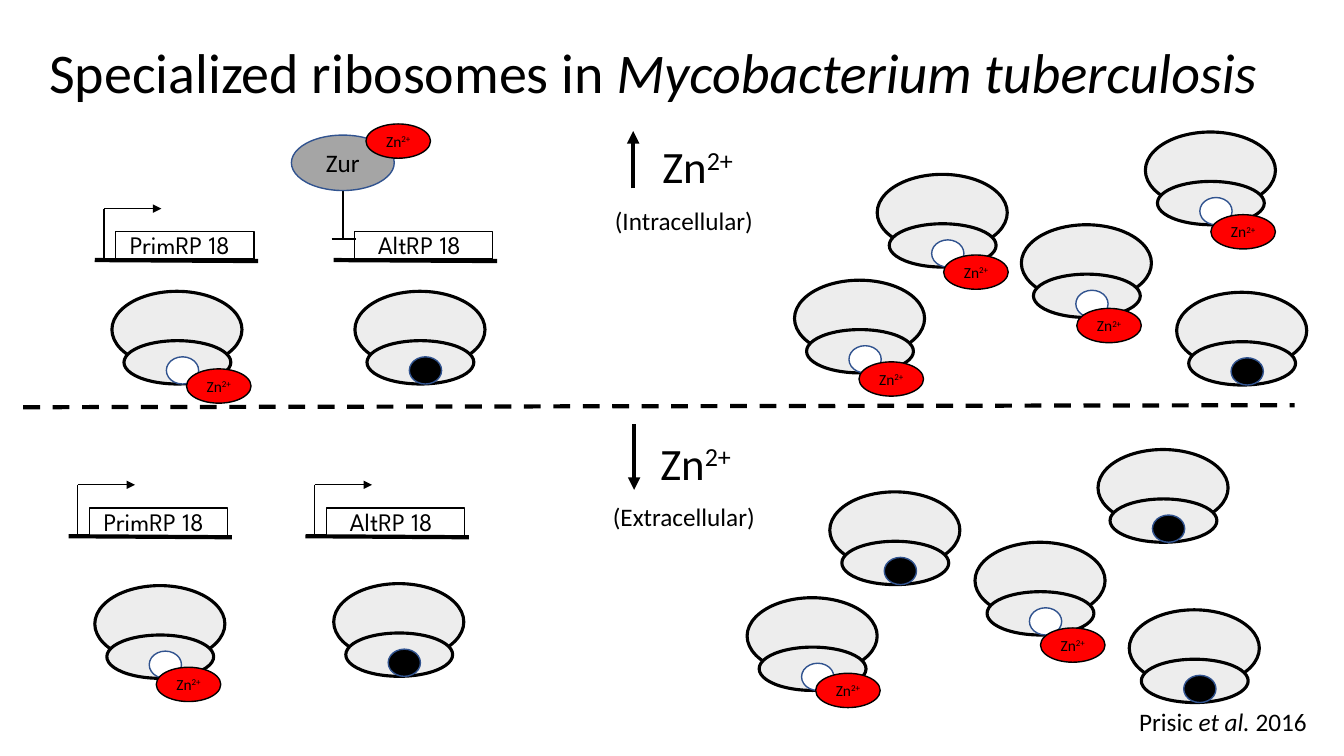
"""Slide on specialized ribosomes of Mycobacterium tuberculosis at high and low zinc."""
from lxml.etree import SubElement
from pptx import Presentation
from pptx.dml.color import RGBColor
from pptx.enum.dml import MSO_LINE
from pptx.enum.shapes import MSO_CONNECTOR, MSO_SHAPE
from pptx.enum.text import MSO_ANCHOR as Anchor, PP_ALIGN as Align
from pptx.oxml.ns import qn
from pptx.util import Inches, Pt

color = RGBColor.from_string
BLACK, WHITE, RED, PALE, GRAY, BLUE = "000000", "FFFFFF", "FF0000", "EDEDED", "A5A5A5", "31538F"
ZINC = [("Zn", ""), ("2+", "super")]


def write(shape, runs, size, font="Calibri"):
    """Fill a shape with one paragraph of (text, style) runs."""
    para = shape.text_frame.paragraphs[0]
    for text, style in runs:
        span = para.add_run()
        span.text = text
        span.font.name = font
        span.font.size = Pt(size)
        span.font.color.rgb = color(BLACK)
        if style == "italic":
            span.font.italic = True
        if style == "super":
            span.font._element.set("baseline", "30000")
    return para


def add_outlined(kind, bounds, fill, line, weight):
    """Add a preset shape with an outline and an optional fill."""
    shape = page.shapes.add_shape(kind, *map(Inches, bounds))
    shape.shadow.inherit = False
    if fill:
        shape.fill.solid()
        shape.fill.fore_color.rgb = color(fill)
    else:
        shape.fill.background()
    shape.line.color.rgb = color(line)
    shape.line.width = Pt(weight)
    return shape


deck = Presentation()
deck.slide_width, deck.slide_height = Inches(13.33), Inches(7.5)
page = deck.slides.add_slide(deck.slide_layouts[6])

labels = [
    ((6.47, 1.33, 1.42, 0.64), ZINC, 32, "Calibri"),
    ((6, 1.99, 1.65, 0.4), [("(Intracellular)", "")], 18, "Calibri"),
    ((6.45, 4.27, 1.42, 0.64), ZINC, 32, "Calibri"),
    ((5.98, 4.92, 1.65, 0.4), [("(Extracellular)", "")], 18, "Calibri"),
    ((11.2, 6.96, 2.97, 0.4), [("Prisic ", ""), ("et al. ", "italic"), ("2016", "")], 18, "Calibri"),
]
lines = [
    ((0.23, 4.04, 12.84, 4.02), 3, "dash"),
    ((6.28, 1.87, 6.28, 1.3), 3, "arrow"),
    ((6.29, 4.21, 6.29, 4.86), 3, "arrow"),
    ((3.4, 1.87, 3.4, 2.36), 1, "plain"),
    ((3.29, 2.37, 3.53, 2.37), 1, "plain"),
]

genes = [
    ("PrimRP 18", 0.94, 2.58, 0.25, 1.37, True),
    ("AltRP 18", 3.31, 2.58, 0.34, 1.18, False),
    ("PrimRP 18", 0.68, 5.32, 0.25, 1.37, True),
    ("AltRP 18", 3.03, 5.32, 0.34, 1.18, True),
]
for name, left, base, indent, width, active in genes:
    add_outlined(MSO_SHAPE.RECTANGLE, (left + 0.21, base - 0.28, 1.37, 0.27), None, BLACK, 0.75)
    labels.append(((left + indent, base - 0.35, width, 0.4), [(name, "")], 18, "League Spartan"))
    lines.append(((left, base, left + 1.62, base + 0.01), 3, "plain"))
    if active:
        start, top = left + 0.09, base - 0.51
        lines.append(((start, top, start, base - 0.01), 1, "plain"))
        lines.append(((start, top, start + 0.57, top), 0.75, "arrow"))

for ends, weight, style in lines:
    link = page.shapes.add_connector(MSO_CONNECTOR.STRAIGHT, *map(Inches, ends))
    link.line.color.rgb = color(BLACK)
    link.line.width = Pt(weight)
    if style == "dash":
        link.line.dash_style = MSO_LINE.DASH
    if style == "arrow":
        SubElement(link.line._get_or_add_ln(), qn("a:tailEnd"), type="triangle")
    SubElement(link._element.spPr, qn("a:effectLst"))

ribosomes = [
    (1.11, 2.89, (1.85, 3.66)),
    (3.52, 2.89, None),
    (8.7, 1.73, (9.36, 2.53)),
    (10.13, 2.23, (10.68, 3.06)),
    (7.88, 2.78, (8.52, 3.59)),
    (11.36, 1.31, (12.01, 2.13)),
    (11.67, 2.9, None),
    (0.94, 5.81, (1.55, 6.62)),
    (3.31, 5.79, None),
    (8.23, 4.88, None),
    (9.67, 5.38, (10.32, 6.23)),
    (7.41, 5.93, (8.09, 6.68)),
    (10.89, 4.46, None),
    (11.2, 6.05, None),
]
for left, top, zinc in ribosomes:
    add_outlined(MSO_SHAPE.OVAL, (left, top, 1.29, 0.76), PALE, BLACK, 2.25)
    add_outlined(MSO_SHAPE.OVAL, (left + 0.12, top + 0.49, 1.06, 0.43), PALE, BLACK, 2.25)
    core = WHITE if zinc else BLACK
    add_outlined(MSO_SHAPE.OVAL, (left + 0.54, top + 0.65, 0.32, 0.27), core, BLUE, 1)

badges = [((2.89, 1.34, 1.02, 0.55), GRAY, BLUE, [("Zur", "")], 18)]
for place in [(3.63, 1.23)] + [zinc for left, top, zinc in ribosomes if zinc]:
    badges.append(((*place, 0.64, 0.34), RED, BLACK, ZINC, 11))
for bounds, fill, line, runs, size in badges:
    badge = add_outlined(MSO_SHAPE.OVAL, bounds, fill, line, 1)
    badge.text_frame.word_wrap = False
    badge.text_frame.vertical_anchor = Anchor.MIDDLE
    write(badge, runs, size).alignment = Align.CENTER

for bounds, runs, size, font in labels:
    box = page.shapes.add_textbox(*map(Inches, bounds))
    box.text_frame.word_wrap = True
    write(box, runs, size, font)

title = page.shapes.add_textbox(Inches(0.39), Inches(0.02), Inches(13.51), Inches(1.45))
title.text_frame.word_wrap = True
title.text_frame.vertical_anchor = Anchor.MIDDLE
heading = [("Specialized ribosomes in ", ""), ("Mycobacterium tuberculosis", "italic")]
write(title, heading, 40).line_spacing = 0.9

deck.save("out.pptx")
